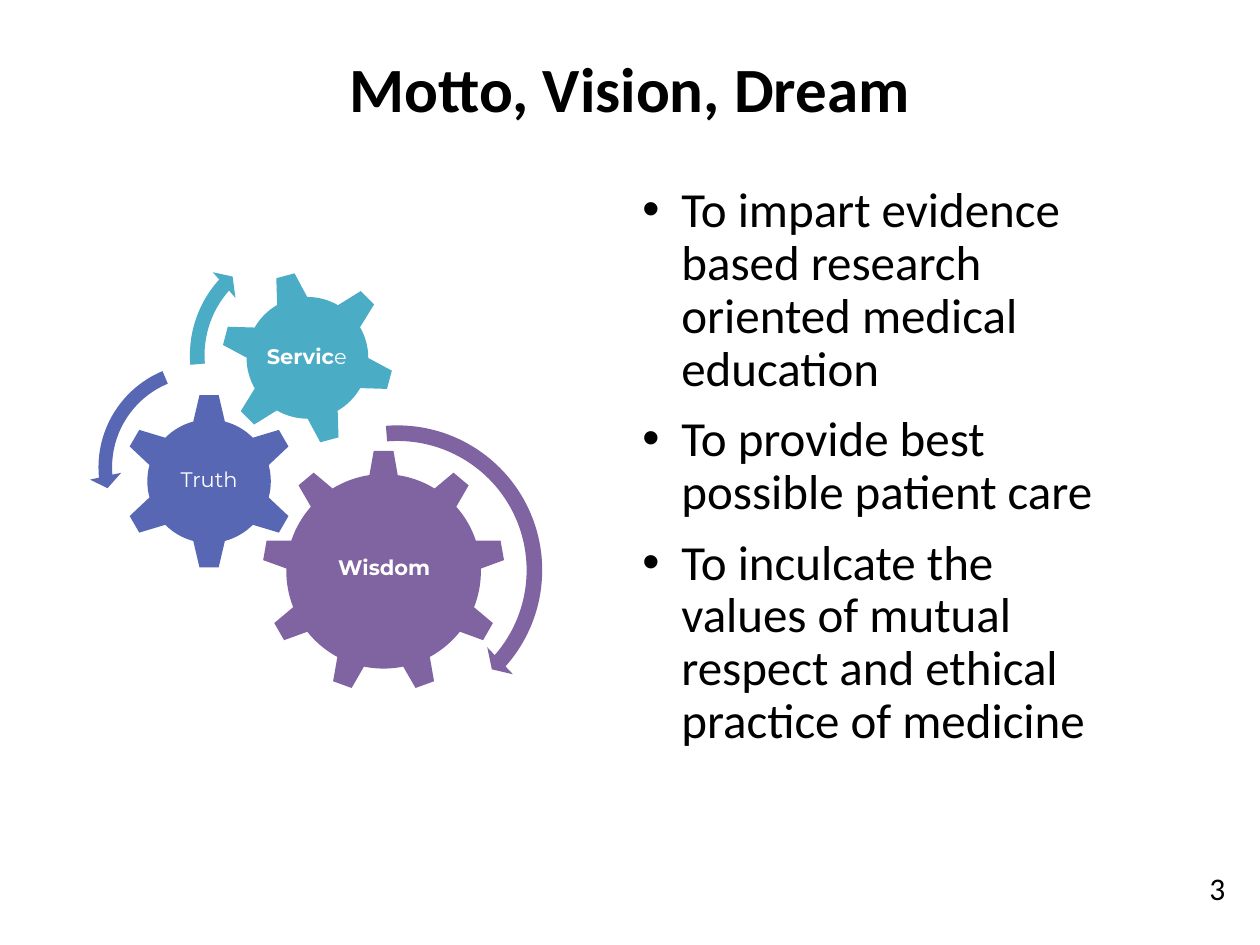
from dataclasses import dataclass

from lxml import etree
from pptx import Presentation
from pptx import util as u
from pptx.dml.color import RGBColor
from pptx.enum import shapes, text
from pptx.oxml.ns import qn


@dataclass(frozen=True)
class Theme:
    body_font: str = "Calibri"
    gear_font: str = "Montserrat"
    black: str = "000000"
    white: str = "FFFFFF"
    purple: str = "8064A2"
    indigo: str = "5767B4"
    teal: str = "4BACC6"
    title_size: int = 36
    bullet_size: int = 28
    number_size: int = 18
    gear_size: int = 12


@dataclass(frozen=True)
class Area:
    left: float
    top: float
    width: float
    height: float

    def lengths(self) -> list:
        return [u.Inches(v) for v in (self.left, self.top, self.width, self.height)]


@dataclass(frozen=True)
class Span:
    words: str
    bold: bool = False


@dataclass(frozen=True)
class Gear:
    preset: shapes.MSO_SHAPE
    area: Area
    color: str
    label_area: Area
    label: tuple[Span, ...]
    rotation: float = 0


@dataclass(frozen=True)
class Arc:
    preset: shapes.MSO_SHAPE
    area: Area
    color: str
    adjustments: tuple[float, ...]


THEME = Theme()
MIDDLE = text.MSO_ANCHOR.MIDDLE
CENTER = text.PP_ALIGN.CENTER
PRESET = shapes.MSO_SHAPE

BULLETS = (
    "To impart evidence based research oriented medical education",
    "To provide best possible patient care",
    "To inculcate the values of mutual respect and ethical practice of medicine",
)

GEARS = (
    Gear(PRESET.GEAR_9, Area(2.08, 3.57, 1.93, 1.93), THEME.purple,
         Area(2.47, 4.02, 1.16, 0.99), (Span("Wisdom", True),)),
    Gear(PRESET.GEAR_6, Area(0.96, 3.12, 1.4, 1.4), THEME.indigo,
         Area(1.31, 3.47, 0.7, 0.69), (Span("Truth"),)),
    Gear(PRESET.GEAR_6, Area(1.75, 2.15, 1.38, 1.38), THEME.teal,
         Area(2.05, 2.45, 0.77, 0.77), (Span("Servic", True), Span("e")), 345),
)

ARCS = (
    Arc(PRESET.CIRCULAR_ARROW, Area(1.92, 3.29, 2.47, 2.47), THEME.purple,
        (0.05, 2.99, 24.87, 159.25, 0.06)),
    Arc(PRESET.LEFT_CIRCULAR_ARROW, Area(0.71, 2.81, 1.8, 1.8), THEME.indigo,
        (0.06, 4.3, 104.89, 148.38, 0.07)),
    Arc(PRESET.CIRCULAR_ARROW, Area(1.43, 1.85, 1.94, 1.94), THEME.teal,
        (0.06, 3.94, 133.14, 105.08, 0.07)),
)


def add_box(parent, area: Area, anchor=text.MSO_ANCHOR.TOP, inset: float | None = None):
    frame = parent.shapes.add_textbox(*area.lengths()).text_frame
    frame.word_wrap = True
    frame.vertical_anchor = anchor
    if inset is not None:
        frame.margin_left = frame.margin_right = u.Inches(inset)
        frame.margin_top = frame.margin_bottom = u.Inches(inset)
    return frame


def add_span(para, span: Span, size: int, color: str, font: str = THEME.body_font) -> None:
    run = para.add_run()
    run.text = span.words
    run.font.name = font
    run.font.size = u.Pt(size)
    run.font.bold = span.bold
    run.font.color.rgb = RGBColor.from_string(color)


def add_solid(parent, preset: shapes.MSO_SHAPE, area: Area, color: str):
    shape = parent.shapes.add_shape(preset, *area.lengths())
    shape.shadow.inherit = False
    shape.fill.solid()
    shape.fill.fore_color.rgb = RGBColor.from_string(color)
    shape.line.fill.background()
    return shape


def add_gear(parent, gear: Gear) -> None:
    add_solid(parent, gear.preset, gear.area, gear.color).rotation = gear.rotation
    para = add_box(parent, gear.label_area, MIDDLE, 0.02).paragraphs[0]
    para.alignment = CENTER
    para.line_spacing = 0.9
    for span in gear.label:
        add_span(para, span, THEME.gear_size, THEME.white, THEME.gear_font)


def add_arc(parent, arc: Arc) -> None:
    shape = add_solid(parent, arc.preset, arc.area, arc.color)
    for index, value in enumerate(arc.adjustments):
        shape.adjustments[index] = value


def add_bullets(page, area: Area, items: tuple[str, ...]) -> None:
    frame = add_box(page, area)
    for index, item in enumerate(items):
        para = frame.add_paragraph() if index else frame.paragraphs[0]
        properties = para._p.get_or_add_pPr()
        properties.set("marL", str(u.Inches(0.31)))
        properties.set("indent", str(u.Inches(-0.31)))
        etree.SubElement(properties, qn("a:buFont")).set("typeface", "Arial")
        etree.SubElement(properties, qn("a:buChar")).set("char", "•")
        para.line_spacing = 0.9
        if index:
            para.space_before = u.Pt(10)
        add_span(para, Span(item), THEME.bullet_size, THEME.black)


def main() -> None:
    deck = Presentation()
    deck.slide_width, deck.slide_height = u.Inches(10), u.Inches(7.5)
    page = deck.slides.add_slide(deck.slide_layouts[6])

    title = add_box(page, Area(0.5, 0.3, 9, 0.78), MIDDLE).paragraphs[0]
    title.alignment = CENTER
    add_span(title, Span("Motto, Vision, Dream", True), THEME.title_size, THEME.black)

    add_bullets(page, Area(5, 1.42, 3.9, 5.66), BULLETS)

    number = add_box(page, Area(9.5, 6.85, 0.5, 0.4)).paragraphs[0]
    add_span(number, Span("3"), THEME.number_size, THEME.black)

    gearing = page.shapes.add_group_shape()
    for gear in GEARS:
        add_gear(gearing, gear)
    for arc in ARCS:
        add_arc(gearing, arc)

    deck.save("out.pptx")


if __name__ == "__main__":
    main()
